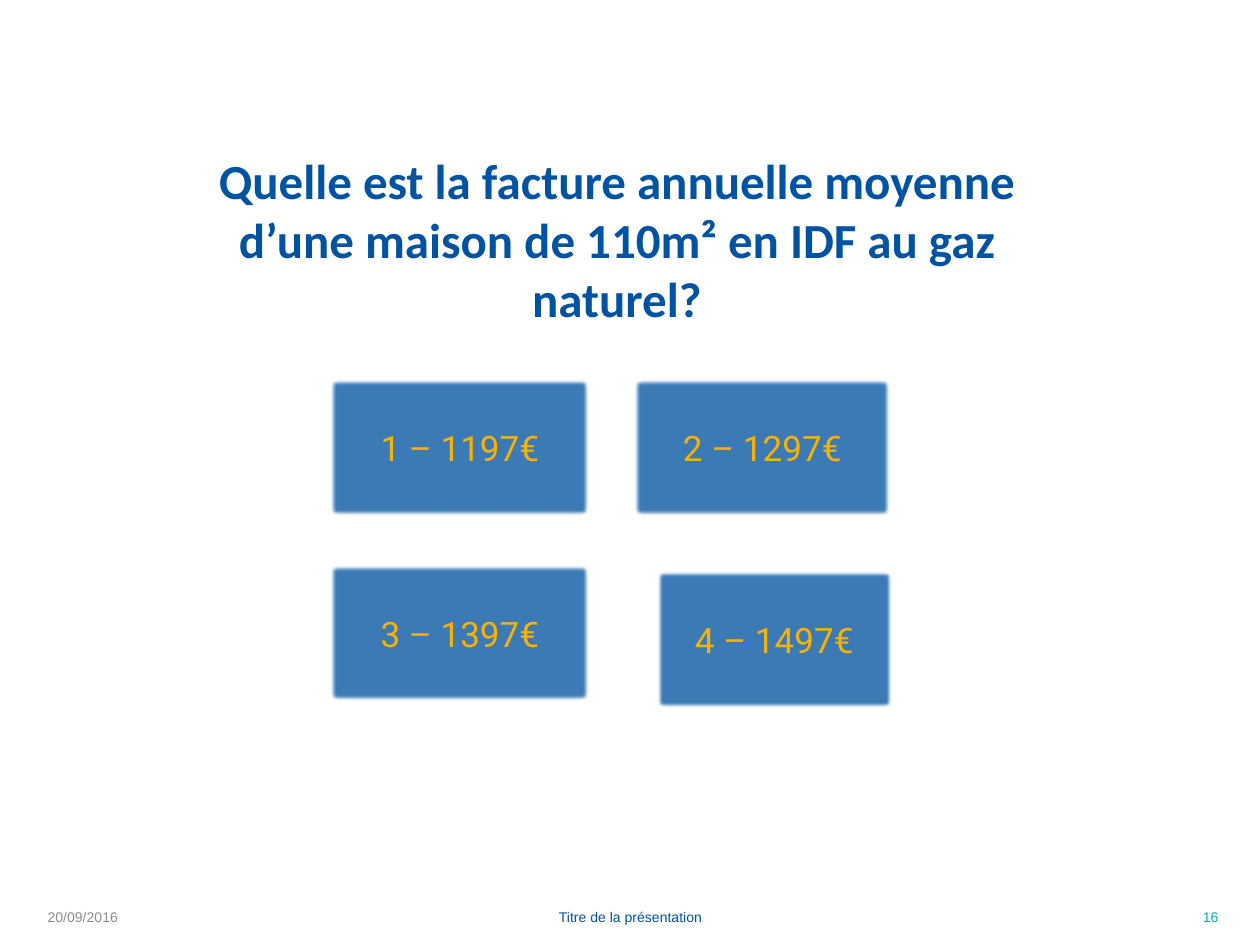
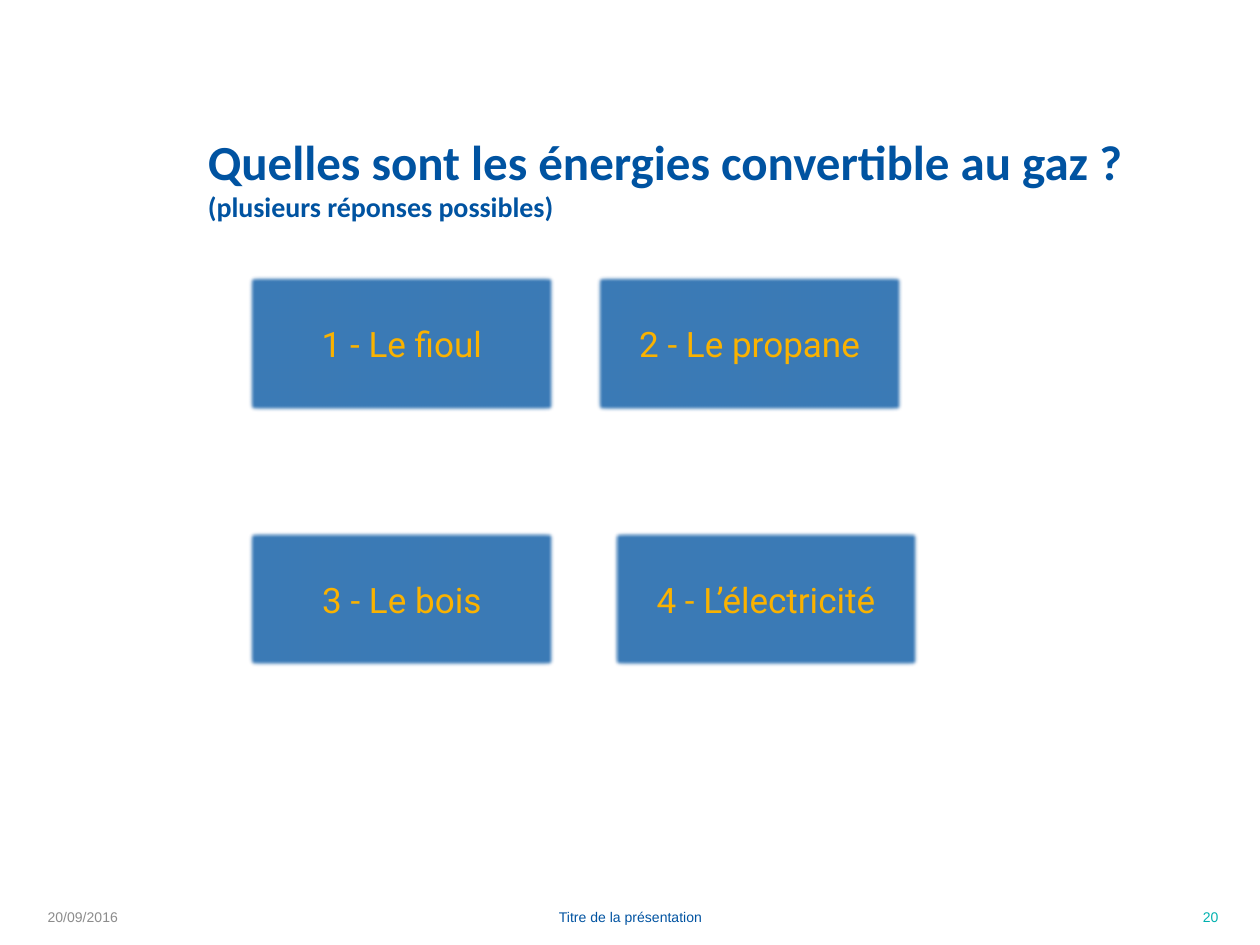
from dataclasses import dataclass

from lxml.etree import SubElement
from pptx import Presentation
from pptx.dml.color import RGBColor
from pptx.enum.shapes import MSO_SHAPE
from pptx.enum.text import MSO_ANCHOR, MSO_AUTO_SIZE, PP_ALIGN
from pptx.oxml.ns import qn
from pptx.util import Emu, Pt

PX = 9144  # 100 px to the inch


@dataclass(frozen=True)
class Theme:
    blue: str = "0053A1"
    amber: str = "FAB200"
    grey: str = "8C8C8C"
    teal: str = "00B1AF"
    title_font: str = "Calibri"
    answer_font: str = "Roboto"
    footer_font: str = "Arial"
    title_size: int = 28
    hint_size: int = 16
    answer_size: int = 20
    footer_size: int = 8
    answer_opacity: int = 77
    soft_edge: float = 2.5


THEME = Theme()


def px(*lengths):
    return [Emu(length * PX) for length in lengths]


def write(frame, *lines, font, color, sizes, bold=False,
          align=PP_ALIGN.LEFT, anchor=MSO_ANCHOR.MIDDLE, inset=(10, 5)):
    """Fill a text frame with one paragraph; each line has its own size."""
    frame.word_wrap = True
    frame.auto_size = MSO_AUTO_SIZE.NONE
    frame.vertical_anchor = anchor
    frame.margin_left = frame.margin_right = Emu(inset[0] * PX)
    frame.margin_top = frame.margin_bottom = Emu(inset[1] * PX)
    paragraph = frame.paragraphs[0]
    paragraph.alignment = align
    for index, (line, size) in enumerate(zip(lines, sizes)):
        if index:
            paragraph.add_line_break()
        run = paragraph.add_run()
        run.text = line
        run.font.name = font
        run.font.size = Pt(size)
        run.font.bold = bold
        run.font.color.rgb = RGBColor.from_string(color)


def add_question(slide, box, *lines, **layout):
    title = slide.shapes.title
    title.left, title.top, title.width, title.height = px(*box)
    write(title.text_frame, *lines, font=THEME.title_font, color=THEME.blue,
          sizes=(THEME.title_size, THEME.hint_size), bold=True, **layout)


def soften(answer):
    """Make the fill translucent and blur the border."""
    properties = answer._element.spPr
    color = properties.find(qn("a:solidFill"))[0]
    SubElement(color, qn("a:alpha"), val=str(THEME.answer_opacity * 1000))
    effects = properties.find(qn("a:effectLst"))
    SubElement(effects, qn("a:softEdge"), rad=str(Pt(THEME.soft_edge)))


def add_answer(slide, box, label):
    answer = slide.shapes.add_shape(MSO_SHAPE.RECTANGLE, *px(*box))
    answer.shadow.inherit = False
    answer.fill.solid()
    answer.fill.fore_color.rgb = RGBColor.from_string(THEME.blue)
    answer.line.fill.background()
    soften(answer)
    write(answer.text_frame, label, font=THEME.answer_font, color=THEME.amber,
          sizes=(THEME.answer_size,), align=PP_ALIGN.CENTER)


def add_answers(slide, origin, labels, offsets, widths, height=111):
    """Place the answers, numbered from 1, at offsets from the origin."""
    left, top = origin
    for label, (dx, dy), width in zip(labels, offsets, widths):
        add_answer(slide, (left + dx, top + dy, width, height), label)


def add_footer(slide, number, left=28, top=708, width=949, height=40):
    side, middle = 233, 317
    parts = (
        ("20/09/2016", left, side, THEME.grey, PP_ALIGN.LEFT),
        ("Titre de la présentation", left + (width - middle) // 2 - 2, middle,
         THEME.blue, PP_ALIGN.CENTER),
        (str(number), left + width - side, side, THEME.teal, PP_ALIGN.RIGHT),
    )
    for text, part_left, part_width, color, align in parts:
        part = slide.shapes.add_textbox(*px(part_left, top, part_width, height))
        write(part.text_frame, text, font=THEME.footer_font, color=color,
              sizes=(THEME.footer_size,), align=align)


def add_quiz_slide(deck, number):
    title_only = deck.slide_layouts[5]
    slide = deck.slides.add_slide(title_only)
    add_footer(slide, number)
    return slide


def build_bill_slide(deck):
    slide = add_quiz_slide(deck, 16)
    add_question(slide, (136, 155, 707, 69),
                 "Quelle est la facture annuelle moyenne d’une maison de "
                 "110m² en IDF au gaz naturel?", align=PP_ALIGN.CENTER)
    add_answers(slide, (261, 300),
                ("1 – 1197€", "2 – 1297€", "3 – 1397€", "4 – 1497€"),
                offsets=((0, 0), (241, 0), (0, 147), (259, 152)),
                widths=(208, 206, 208, 189))


def build_energy_slide(deck):
    slide = add_quiz_slide(deck, 20)
    add_question(slide, (165, 104, 752, 69),
                 "Quelles sont les énergies convertible au gaz ? ",
                 "(plusieurs réponses possibles)",
                 anchor=MSO_ANCHOR.TOP, inset=(0, 0))
    add_answers(slide, (196, 217),
                ("1 - Le fioul", "2 - Le propane", "3 - Le bois",
                 "4 - L’électricité"),
                offsets=((0, 0), (276, 0), (0, 203), (289, 203)),
                widths=(246,) * 4)


def main():
    deck = Presentation()
    deck.slide_width, deck.slide_height = px(1000, 750)
    build_bill_slide(deck)
    build_energy_slide(deck)
    deck.save("out.pptx")


if __name__ == "__main__":
    main()
